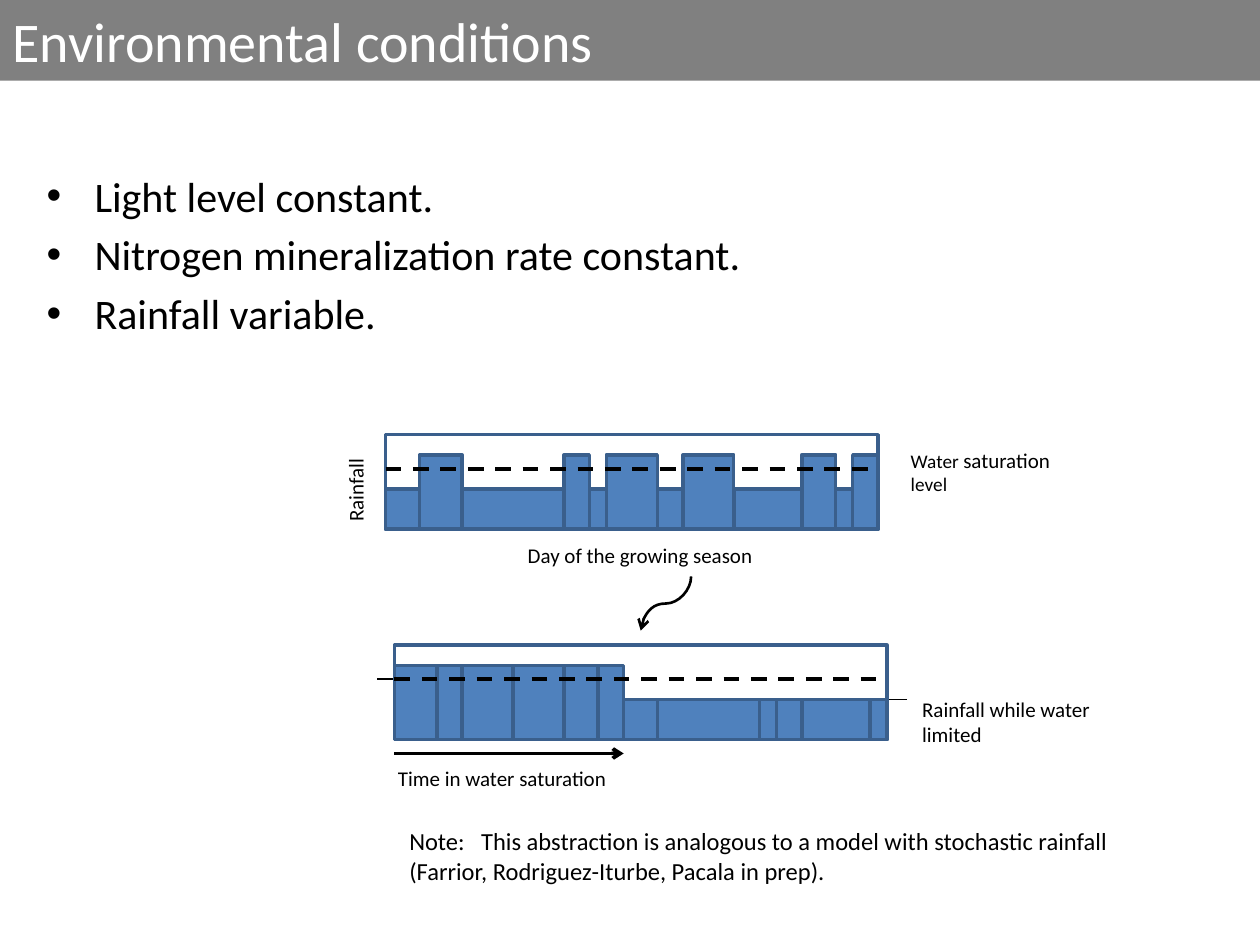
from lxml.etree import SubElement
from pptx import Presentation
from pptx.dml.color import RGBColor
from pptx.enum.dml import MSO_LINE
from pptx.enum.shapes import MSO_CONNECTOR as Link, MSO_SHAPE as Shape
from pptx.enum.text import MSO_ANCHOR as Anchor, MSO_AUTO_SIZE as AutoSize, PP_ALIGN as Align
from pptx.oxml.ns import qn
from pptx.util import Inches, Pt

BLACK = RGBColor(0x00, 0x00, 0x00)
WHITE = RGBColor(0xFF, 0xFF, 0xFF)
GRAY = RGBColor(0x80, 0x80, 0x80)
BLUE = RGBColor(0x4F, 0x81, 0xBD)
DARK_BLUE = RGBColor(0x3A, 0x5F, 0x8C)
FONT = "Calibri"

TITLE = "Environmental conditions"
CONDITIONS = [
    "Light level constant.",
    "Nitrogen mineralization rate constant.",
    "Rainfall variable.",
]
# Spells of the season in order: (kind, length in days)
SEASON = [
    ("dry", 4), ("wet", 5), ("dry", 12), ("wet", 3), ("dry", 2), ("wet", 6),
    ("dry", 3), ("wet", 6), ("dry", 8), ("wet", 4), ("dry", 2), ("wet", 3),
]
# Text runs with sizes, then left, top, width, height, rotation, alignment
LABELS = [
    ([("Day of the growing season", 12)], 4.09, 4.26, 2.5, 0.3, 0, Align.LEFT),
    ([("Rainfall", 12)], 2.29, 3.74, 1.06, 0.3, 270, Align.CENTER),
    ([("Rainfall while water limited", 12)], 7.22, 5.48, 1.95, 0.5, 0, Align.LEFT),
    ([("Time in water saturation", 12)], 3.06, 6.03, 2.64, 0.3, 0, Align.LEFT),
    ([("Note:\tThis abstraction is analogous to a model with stochastic rainfall "
       "(Farrior, Rodriguez-Iturbe, Pacala in prep).", 14)],
     3.15, 6.51, 6.34, 0.57, 0, Align.LEFT),
    ([("Water ", 11), ("saturation", 12), (" level", 11)],
     7.13, 3.5, 1.6, 0.5, 0, Align.LEFT),
]
NOTE_TAB = 0.57

CHART_WIDTH, CHART_HEIGHT = 3.91, 0.75
BAR_HEIGHT = {"dry": 0.32, "wet": 0.59}
SATURATION_DROP = 0.27
DAY = CHART_WIDTH / sum(days for _, days in SEASON)
UPPER = (3.06, 3.45)
LOWER = (3.13, 5.12)


def set_font(font, size, color=BLACK):
    font.name, font.size = FONT, Pt(size)
    font.color.rgb = color


def add_box(page, left, top, width, height, fill=None):
    box = page.shapes.add_shape(
        Shape.RECTANGLE, Inches(left), Inches(top), Inches(width), Inches(height))
    box.shadow.inherit = False
    if fill is None:
        box.fill.background()
    else:
        box.fill.solid()
        box.fill.fore_color.rgb = fill
    box.line.color.rgb = DARK_BLUE
    box.line.width = Pt(2)


def add_line(page, start, end, width, dashed=False, arrow=False, kind=Link.STRAIGHT):
    line = page.shapes.add_connector(kind, *(Inches(v) for v in (*start, *end)))
    line.line.color.rgb = BLACK
    line.line.width = Pt(width)
    if dashed:
        line.line.dash_style = MSO_LINE.DASH
    properties = line._element.spPr
    if arrow:
        SubElement(properties.find(qn("a:ln")), qn("a:tailEnd"), type="arrow")
    SubElement(properties, qn("a:effectLst"))
    return line


def add_rain_chart(page, left, top, spells):
    add_box(page, left, top, CHART_WIDTH, CHART_HEIGHT)
    bars, start = [], left
    for kind, days in spells:
        bars.append((kind, start, days * DAY))
        start += days * DAY
    # Wet bars go last so that their outlines lie over the dry ones
    for kind, bar_left, width in sorted(bars):
        height = BAR_HEIGHT[kind]
        add_box(page, bar_left, top + CHART_HEIGHT - height, width, height, BLUE)
    level = top + SATURATION_DROP
    add_line(page, (left, level), (left + CHART_WIDTH, level), 2.25, dashed=True)


def add_label(page, spans, left, top, width, height, rotation, alignment):
    box = page.shapes.add_textbox(
        Inches(left), Inches(top), Inches(width), Inches(height))
    box.rotation = rotation
    box.text_frame.word_wrap = True
    para = box.text_frame.paragraphs[0]
    para.alignment = alignment
    if "\t" in spans[0][0]:
        tabs = SubElement(para._p.get_or_add_pPr(), qn("a:tabLst"))
        SubElement(tabs, qn("a:tab"), pos=str(Inches(NOTE_TAB)), algn="l")
    set_font(para.font, spans[0][1])
    for text, size in spans:
        span = para.add_run()
        span.text = text
        if len(spans) > 1:
            set_font(span.font, size)


def place(shape, left, top, width, height):
    shape.left, shape.top = Inches(left), Inches(top)
    shape.width, shape.height = Inches(width), Inches(height)
    shape.text_frame.auto_size = AutoSize.NONE


def fill_placeholders(page):
    title, body = page.shapes.title, page.placeholders[1]
    place(title, 0, 0, 10, 0.64)
    title.fill.solid()
    title.fill.fore_color.rgb = GRAY
    title.text_frame.text = TITLE
    title.text_frame.vertical_anchor = Anchor.MIDDLE
    para = title.text_frame.paragraphs[0]
    para.alignment = Align.LEFT
    set_font(para.font, 32, WHITE)

    place(body, 0.27, 1.3, 9, 4.95)
    body.text_frame.text = "\n".join(CONDITIONS)
    for index, para in enumerate(body.text_frame.paragraphs):
        indent = para._p.get_or_add_pPr()
        indent.set("marL", str(Inches(0.38)))
        indent.set("indent", str(-Inches(0.38)))
        para.space_before = Pt(4.8 if index else 0)
        set_font(para.font, 24)


def main():
    deck = Presentation()
    deck.slide_width, deck.slide_height = Inches(10), Inches(7.5)
    page = deck.slides.add_slide(deck.slide_layouts[1])
    fill_placeholders(page)

    left, top = LOWER
    level = top + SATURATION_DROP
    dry_level = top + CHART_HEIGHT - BAR_HEIGHT["dry"]
    add_line(page, (7.2, dry_level), (6.86, dry_level), 0.75)
    add_line(page, (3.33, level), (2.99, level), 0.75)

    wet = [spell for spell in SEASON if spell[0] == "wet"]
    dry = [spell for spell in SEASON if spell[0] == "dry"]
    add_rain_chart(page, *UPPER, SEASON)
    add_rain_chart(page, *LOWER, wet + dry)

    wet_end = left + DAY * sum(days for _, days in wet)
    add_line(page, (left, 5.98), (wet_end, 5.98), 2, arrow=True)
    curve = add_line(page, (5.07, 4.59), (5.5, 4.99), 1.5, arrow=True, kind=Link.CURVE)
    curve._element.spPr.find(qn("a:xfrm")).set("rot", str(90 * 60000))

    for label in LABELS:
        add_label(page, *label)
    deck.save("out.pptx")


if __name__ == "__main__":
    main()
